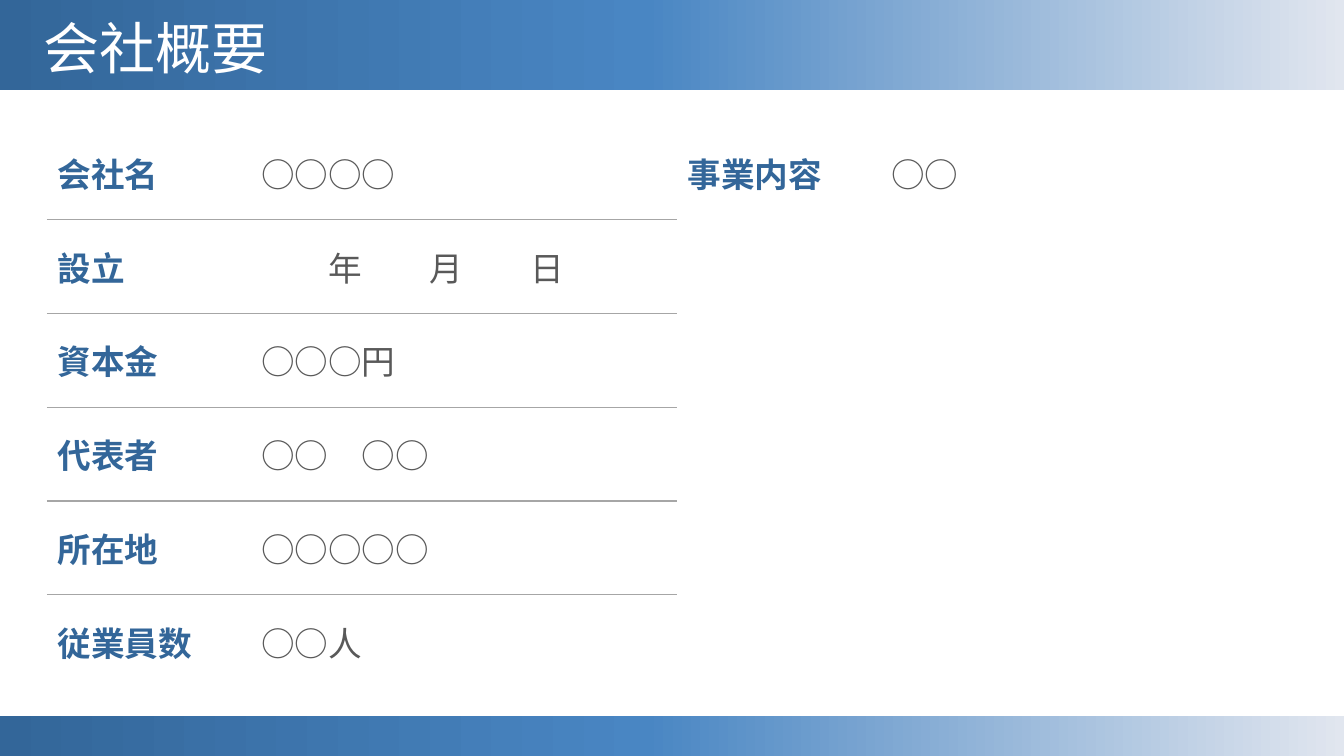
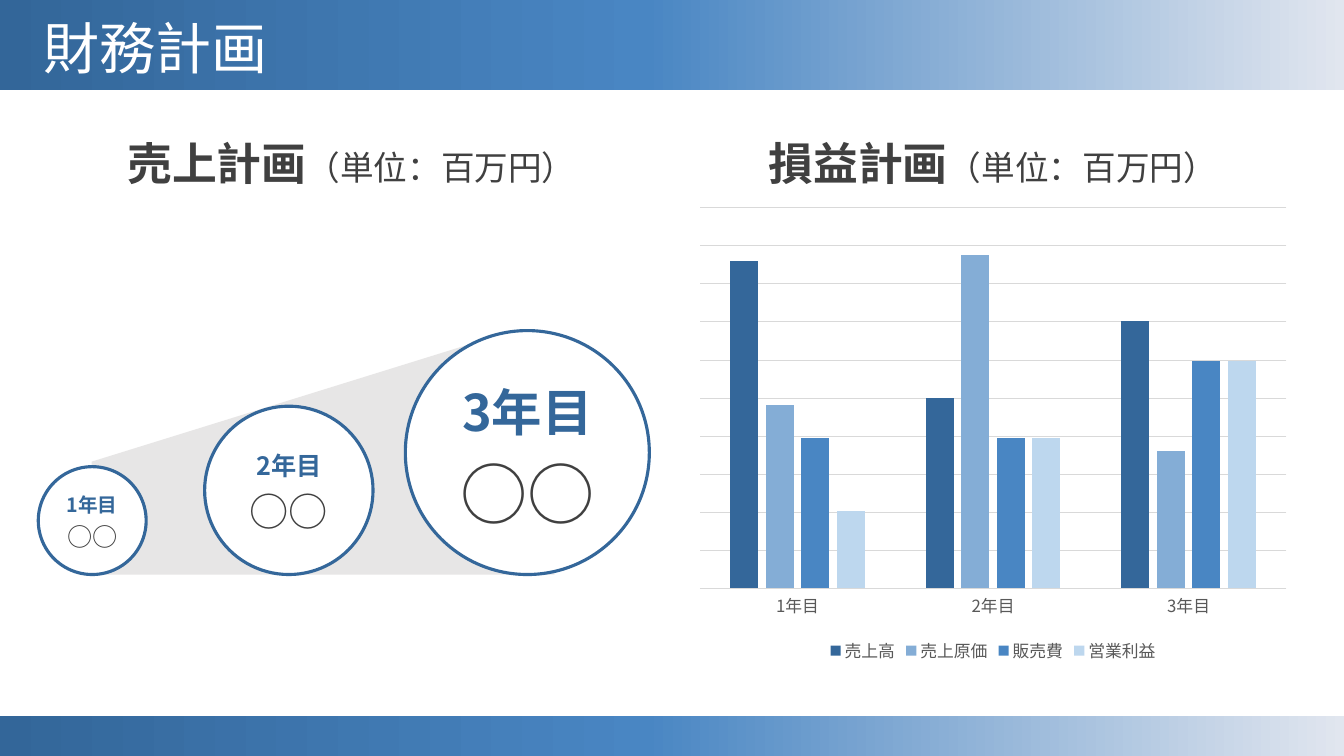
from copy import deepcopy

from lxml.etree import SubElement
from pptx import Presentation
from pptx.chart.data import CategoryChartData
from pptx.dml.color import RGBColor
from pptx.enum.chart import XL_CHART_TYPE, XL_LEGEND_POSITION, XL_TICK_LABEL_POSITION, XL_TICK_MARK
from pptx.enum.shapes import MSO_SHAPE
from pptx.enum.text import MSO_ANCHOR, PP_ALIGN
from pptx.oxml import parse_xml
from pptx.oxml.ns import nsdecls, qn
from pptx.util import Inches, Pt

FONT = "Noto Sans CJK JP"
WHITE = RGBColor(0xFF, 0xFF, 0xFF)
NAVY = RGBColor(0x33, 0x66, 0x99)
DEEP = RGBColor(0x34, 0x67, 0x9A)
BLUE = RGBColor(0x49, 0x86, 0xC3)
MIST = RGBColor(0xE1, 0xE6, 0xEF)
SOFT = RGBColor(0x84, 0xAD, 0xD6)
PALE = RGBColor(0xBD, 0xD7, 0xEE)
INK = RGBColor(0x40, 0x40, 0x40)
GREY = RGBColor(0x59, 0x59, 0x59)
RULE = RGBColor(0xA6, 0xA6, 0xA6)
GRID = RGBColor(0xD9, 0xD9, 0xD9)
WEDGE = RGBColor(0xE7, 0xE6, 0xE6)
BAND_STOPS = ((0, NAVY), (0.48, BLUE), (1, MIST))
WIDTH, HEIGHT = 13.33, 7.5


class Deck:
    def __init__(self):
        self.prs = Presentation()
        self.prs.slide_width = Inches(WIDTH)
        self.prs.slide_height = Inches(HEIGHT)
        self.s = None

    def font(self, font, size, color, bold=False):
        font.size = Pt(size)
        font.bold = bold
        font.color.rgb = color
        font.name = FONT
        SubElement(font._element, qn("a:ea")).set("typeface", FONT)

    def slide(self, title):
        self.s = self.prs.slides.add_slide(self.prs.slide_layouts[6])
        self.band(0, 0.89)
        self.band(7.1, 0.4)
        p = self.text(0.33, 0.15, 11.5, 0.72)
        p.text = title
        self.font(p.font, 40, WHITE)

    def band(self, top, height):
        sp = self.s.shapes.add_shape(
            MSO_SHAPE.RECTANGLE, 0, Inches(top), Inches(WIDTH), Inches(height))
        sp.shadow.inherit = False
        sp.line.fill.background()
        sp.fill.gradient()
        sp.fill.gradient_angle = 0
        stops = sp._element.spPr.find(qn("a:gradFill")).find(qn("a:gsLst"))
        stops.append(deepcopy(stops[0]))
        for stop, (position, color) in zip(sp.fill.gradient_stops, BAND_STOPS):
            stop.position = position
            stop.color.rgb = color

    def text(self, left, top, width, height):
        box = self.s.shapes.add_textbox(
            Inches(left), Inches(top), Inches(width), Inches(height))
        tf = box.text_frame
        tf.word_wrap = True
        tf.vertical_anchor = MSO_ANCHOR.MIDDLE
        p = tf.paragraphs[0]
        p.line_spacing = 0.9
        return p

    def heading(self, left, title, unit):
        p = self.text(left, 1.35, 6.21, 0.6)
        p.alignment = PP_ALIGN.CENTER
        for text, size, bold in ((title, 32, True), (unit, 24, False)):
            r = p.add_run()
            r.text = text
            self.font(r.font, size, INK, bold)

    def cell_rule(self, cell, *sides):
        tcPr = cell._tc.get_or_add_tcPr()
        for i, side in enumerate(sides):
            tcPr.insert(i, parse_xml(
                f'<a:{side} {nsdecls("a")} w="12700"><a:solidFill>'
                f'<a:srgbClr val="{RULE}"/></a:solidFill></a:{side}>'))

    def tabs(self, p, positions):
        tab_list = parse_xml(f'<a:tabLst {nsdecls("a")}/>')
        for position in positions:
            tab = SubElement(tab_list, qn("a:tab"))
            tab.set("pos", str(Inches(position)))
            tab.set("algn", "l")
        p._p.get_or_add_pPr().insert(0, tab_list)

    def profile(self, rows, widths):
        table = self.s.shapes.add_table(
            len(rows), len(widths), Inches(0.47), Inches(1.25),
            Inches(sum(widths)), Inches(0.93 * len(rows))).table
        table.first_row = table.horz_banding = False
        for column, width in zip(table.columns, widths):
            column.width = Inches(width)
        for i, row in enumerate(rows):
            for j in range(len(widths)):
                cell = table.cell(i, j)
                cell.fill.solid()
                cell.fill.fore_color.rgb = WHITE
                cell.vertical_anchor = MSO_ANCHOR.MIDDLE
                if j < 2:
                    sides = ["lnT"] if i else []
                    if i < len(rows) - 1:
                        sides.append("lnB")
                    self.cell_rule(cell, *sides)
                if j < len(row):
                    is_label = j % 2 == 0
                    p = cell.text_frame.paragraphs[0]
                    p.text = row[j]
                    self.font(p.font, 24, NAVY if is_label else GREY, is_label)
                    if "\t" in row[j]:
                        self.tabs(p, (0.67, 1.67, 2.67))

    def wedge(self, points):
        (x, y), *rest = [(Inches(a), Inches(b)) for a, b in points]
        builder = self.s.shapes.build_freeform(x, y)
        builder.add_line_segments(rest)
        sp = builder.convert_to_shape()
        sp.shadow.inherit = False
        sp.fill.solid()
        sp.fill.fore_color.rgb = WEDGE
        sp.line.fill.background()

    def circle(self, left, bottom, diameter, lines):
        sp = self.s.shapes.add_shape(
            MSO_SHAPE.OVAL, Inches(left), Inches(bottom - diameter),
            Inches(diameter), Inches(diameter))
        sp.shadow.inherit = False
        sp.fill.solid()
        sp.fill.fore_color.rgb = WHITE
        sp.line.color.rgb = DEEP
        sp.line.width = Pt(2.25)
        tf = sp.text_frame
        tf.word_wrap = False
        tf.vertical_anchor = MSO_ANCHOR.MIDDLE
        for i, (text, size, color, bold) in enumerate(lines):
            p = tf.add_paragraph() if i else tf.paragraphs[0]
            p.text = text
            p.alignment = PP_ALIGN.CENTER
            p.line_spacing = 1.14
            self.font(p.font, size, color, bold)

    def columns(self, categories, series):
        data = CategoryChartData()
        data.categories = categories
        for name, values, _ in series:
            data.add_series(name, values)
        chart = self.s.shapes.add_chart(
            XL_CHART_TYPE.COLUMN_CLUSTERED, Inches(6.82), Inches(1.97),
            Inches(6.06), Inches(4.65), data).chart
        chart.has_title = False
        self.font(chart.font, 12, GREY)
        chart.has_legend = True
        chart.legend.position = XL_LEGEND_POSITION.BOTTOM
        chart.legend.include_in_layout = False
        self.font(chart.legend.font, 12, GREY)
        plot = chart.plots[0]
        plot.vary_by_categories = False
        plot.gap_width = 219
        plot.overlap = -27
        for ser, (_, _, color) in zip(plot.series, series):
            ser.format.fill.solid()
            ser.format.fill.fore_color.rgb = color
        cat, val = chart.category_axis, chart.value_axis
        cat.major_tick_mark = XL_TICK_MARK.NONE
        self.font(cat.tick_labels.font, 12, GREY)
        val.visible = False
        val.tick_label_position = XL_TICK_LABEL_POSITION.NONE
        val.minimum_scale = 0
        val.maximum_scale = 114
        val.major_unit = 11.4
        val.has_major_gridlines = True
        for line in (cat.format.line, val.major_gridlines.format.line):
            line.color.rgb = GRID
            line.width = Pt(0.75)


def main():
    deck = Deck()

    deck.slide("会社概要")
    deck.profile(
        (("会社名", "○○○○", "事業内容", "○○"),
         ("設立", "\t年\t月\t日"),
         ("資本金", "○○○円"),
         ("代表者", "○○　○○"),
         ("所在地", "○○○○○"),
         ("従業員数", "○○人")),
        (2.02, 4.23, 2.02, 4.12))

    deck.slide("財務計画")
    years = ("1年目", "2年目", "3年目")
    unit = "（単位：百万円）"
    deck.heading(6.74, "損益計画", unit)
    deck.columns(years, (
        ("売上高", (98, 57, 80), DEEP),
        ("売上原価", (55, 100, 41), SOFT),
        ("販売費", (45, 45, 68), BLUE),
        ("営業利益", (23, 45, 68), PALE)))
    deck.heading(0.38, "売上計画", unit)
    base = 5.7
    deck.wedge(((0.91, 4.58), (4.9, 3.34), (5.5, base), (0.91, base)))
    sizes = ((0.38, 1.07, 14, 18), (2.03, 1.67, 18, 28), (4.02, 2.42, 36, 48))
    for year, (left, diameter, year_size, sales_size) in zip(years, sizes):
        deck.circle(left, base, diameter, (
            (year, year_size, DEEP, True), ("○○", sales_size, INK, False)))

    deck.prs.save("out.pptx")


if __name__ == "__main__":
    main()
